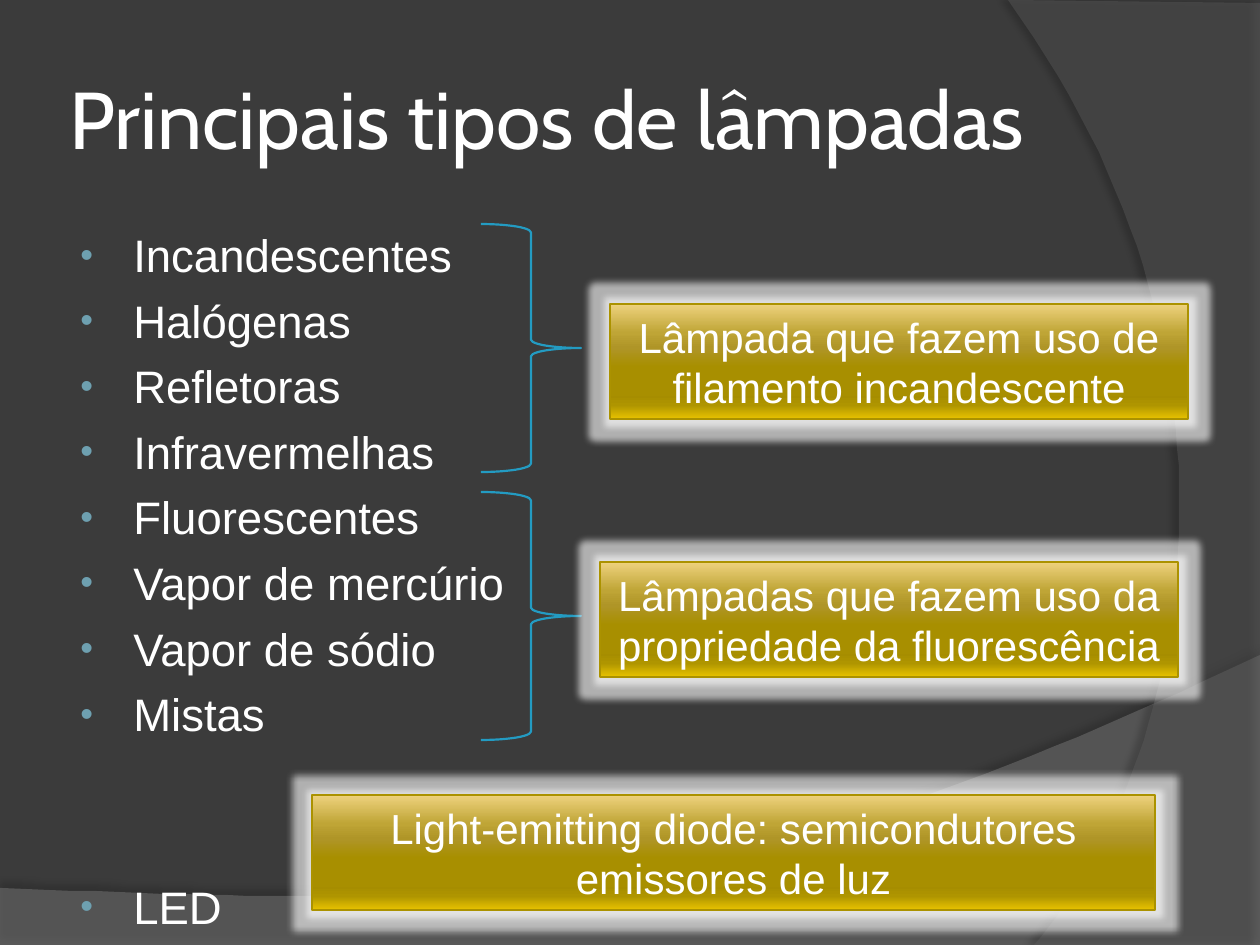
from lxml import etree
from pptx import Presentation
from pptx import util as u
from pptx.dml.color import RGBColor
from pptx.enum import shapes, text
from pptx.oxml import ns

SCALE = 914400 / 126
WHITE = RGBColor(0xFF, 0xFF, 0xFF)
BACK = RGBColor(0x3B, 0x3B, 0x3B)
BLUE = RGBColor(0x23, 0x9B, 0xC2)
EDGE = RGBColor(0xAB, 0x92, 0x00)
WAVE = RGBColor(0x7F, 0x7F, 0x7F)
ARC = RGBColor(0x5E, 0x5E, 0x5E)
GOLD = [(0, "EED27E"), (25, "BFA536"), (38, "AF9527"), (55, "A88F00"),
        (80, "A68D00"), (88, "AF9500"), (100, "E6C100")]
SPACE = f'xmlns:a="{ns.nsdecls("a").split(chr(34))[1]}"'


def px(*nums):
    return [u.Emu(round(n * SCALE)) for n in nums]


def style(frame, font, size):
    for para in frame.paragraphs:
        for run in para.runs:
            run.font.name = font
            run.font.size = u.Pt(size)
            run.font.color.rgb = WHITE


deck = Presentation()
deck.slide_width, deck.slide_height = px(1260, 945)
slide = deck.slides.add_slide(deck.slide_layouts[6])
slide.background.fill.solid()
slide.background.fill.fore_color.rgb = BACK
items = slide.shapes

curves = [
    ([(0, 888), (0, 946), (1260, 946)],
     [(1260, 655), (704, 919), (493, 906), (0, 888)], WAVE, 45, 35, 270),
    ([(1260, 3), (1260, 945)],
     [(1034, 945), (1178, 780), (1283, 378), (1008, 0)], ARC, 40, 45, 180),
]
for start, ctrl, color, alpha, dark, angle in curves:
    pts = list(start)
    for i in range(61):
        t = i / 60
        mix = [(1 - t) ** 3, 3 * t * (1 - t) ** 2, 3 * t * t * (1 - t), t ** 3]
        pts.append(tuple(sum(m * c[k] for m, c in zip(mix, ctrl)) for k in (0, 1)))
    pen = items.build_freeform(*pts[0], scale=SCALE)
    pen.add_line_segments(pts[1:], close=True)
    shape = pen.convert_to_shape()
    shape.fill.solid()
    shape.fill.fore_color.rgb = color
    tint = shape.fill._xPr.find(".//" + ns.qn("a:srgbClr"))
    etree.SubElement(tint, ns.qn("a:alpha"), val=str(alpha * 1000))
    shape.line.fill.background()
    shape._element.spPr.append(etree.fromstring(
        f'<a:effectLst {SPACE}><a:outerShdw blurRad="50800" dist="50800" '
        f'dir="{angle * 60000}" algn="ctr" rotWithShape="0"><a:srgbClr val="000000">'
        f'<a:alpha val="{dark * 1000}"/></a:srgbClr></a:outerShdw></a:effectLst>'))

title = items.add_textbox(*px(63, 38, 1053, 158)).text_frame
title.word_wrap = True
title.vertical_anchor = text.MSO_ANCHOR.MIDDLE
title.margin_left = title.margin_right = u.Inches(0.05)
title.text = "Principais tipos de lâmpadas"
style(title, "Cabin", 46)

lamps = ["Incandescentes", "Halógenas", "Refletoras", "Infravermelhas",
         "Fluorescentes", "Vapor de mercúrio", "Vapor de sódio", "Mistas", "LED"]
gaps = [5] + [11] * 7 + [138]
body = items.add_textbox(*px(63, 221, 504, 669)).text_frame
body.word_wrap = True
body.text = "\n".join(lamps)
style(body, "Arial", 26)
left, hang = px(58, -53)
for para, gap in zip(body.paragraphs, gaps):
    para.space_before = px(gap)[0]
    props = para._p.get_or_add_pPr()
    props.set("marL", str(left))
    props.set("indent", str(hang))
    color = etree.SubElement(props, ns.qn("a:buClr"))
    etree.SubElement(color, ns.qn("a:srgbClr"), val="6EA0B0")
    etree.SubElement(props, ns.qn("a:buSzPct"), val="80000")
    etree.SubElement(props, ns.qn("a:buFont"), typeface="Arial")
    etree.SubElement(props, ns.qn("a:buChar"), char="•")

for top in (224, 492):
    brace = items.add_shape(shapes.MSO_SHAPE.RIGHT_BRACE, *px(481, top, 100, 248))
    brace.shadow.inherit = False
    brace.fill.background()
    brace.line.color.rgb = BLUE
    brace.line.width = u.Pt(1.25)

notes = [
    (610, 304, 578, "Lâmpada que fazem uso de filamento incandescente"),
    (600, 562, 578, "Lâmpadas que fazem uso da\npropriedade da fluorescência"),
    (312, 795, 843, "Light-emitting diode: semicondutores emissores de luz"),
]
stops = "".join(f'<a:gs pos="{pos * 1000}"><a:srgbClr val="{color}"/></a:gs>'
                for pos, color in GOLD)
for x, y, width, words in notes:
    box = items.add_shape(shapes.MSO_SHAPE.RECTANGLE, *px(x, y, width, 115))
    box.line.color.rgb = EDGE
    box.line.width = u.Pt(0.75)
    props = box._element.spPr
    props.insert(2, etree.fromstring(
        f'<a:gradFill {SPACE} rotWithShape="1"><a:gsLst>{stops}</a:gsLst>'
        '<a:lin ang="5400000" scaled="0"/></a:gradFill>'))
    props.append(etree.fromstring(
        f'<a:effectLst {SPACE}><a:glow rad="101600"><a:srgbClr val="FFFFFF">'
        '<a:alpha val="60000"/></a:srgbClr></a:glow></a:effectLst>'))
    frame = box.text_frame
    frame.word_wrap = True
    frame.text = words
    style(frame, "Arial", 24)
    for para in frame.paragraphs:
        para.alignment = text.PP_ALIGN.CENTER

deck.save("out.pptx")
